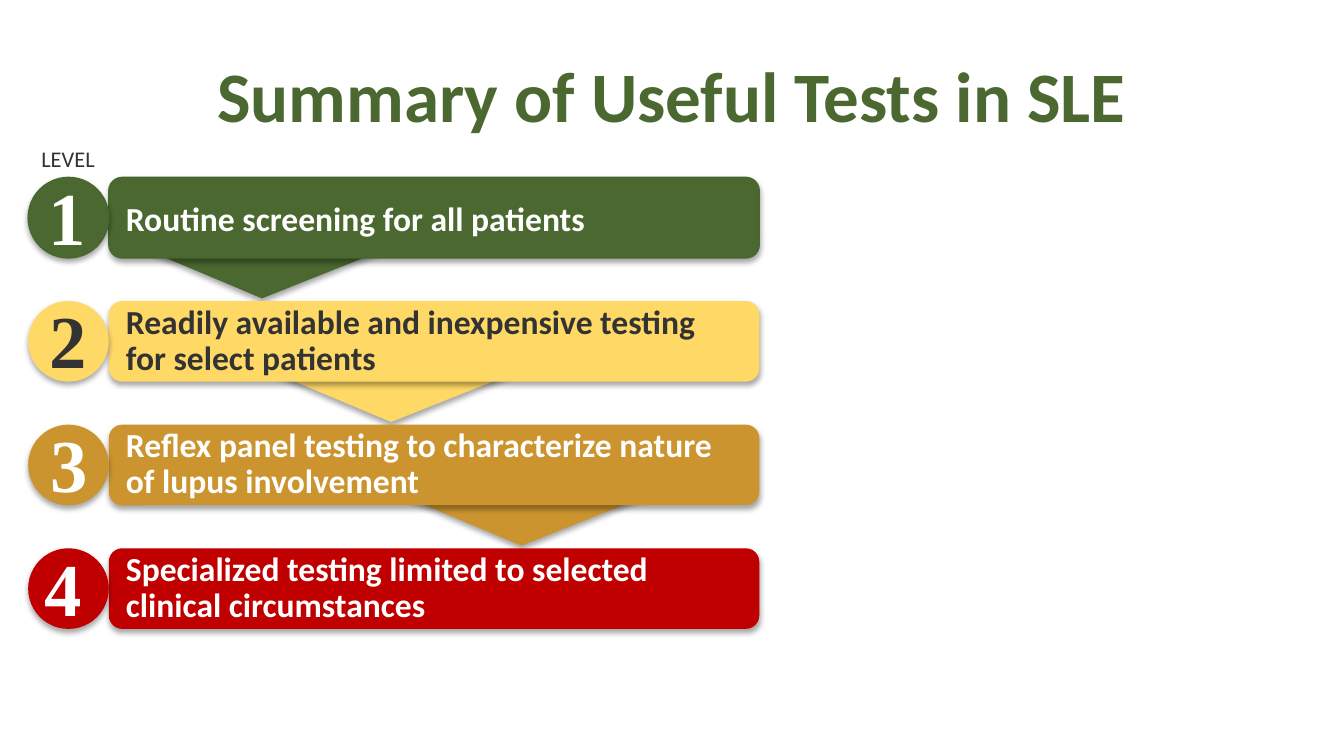
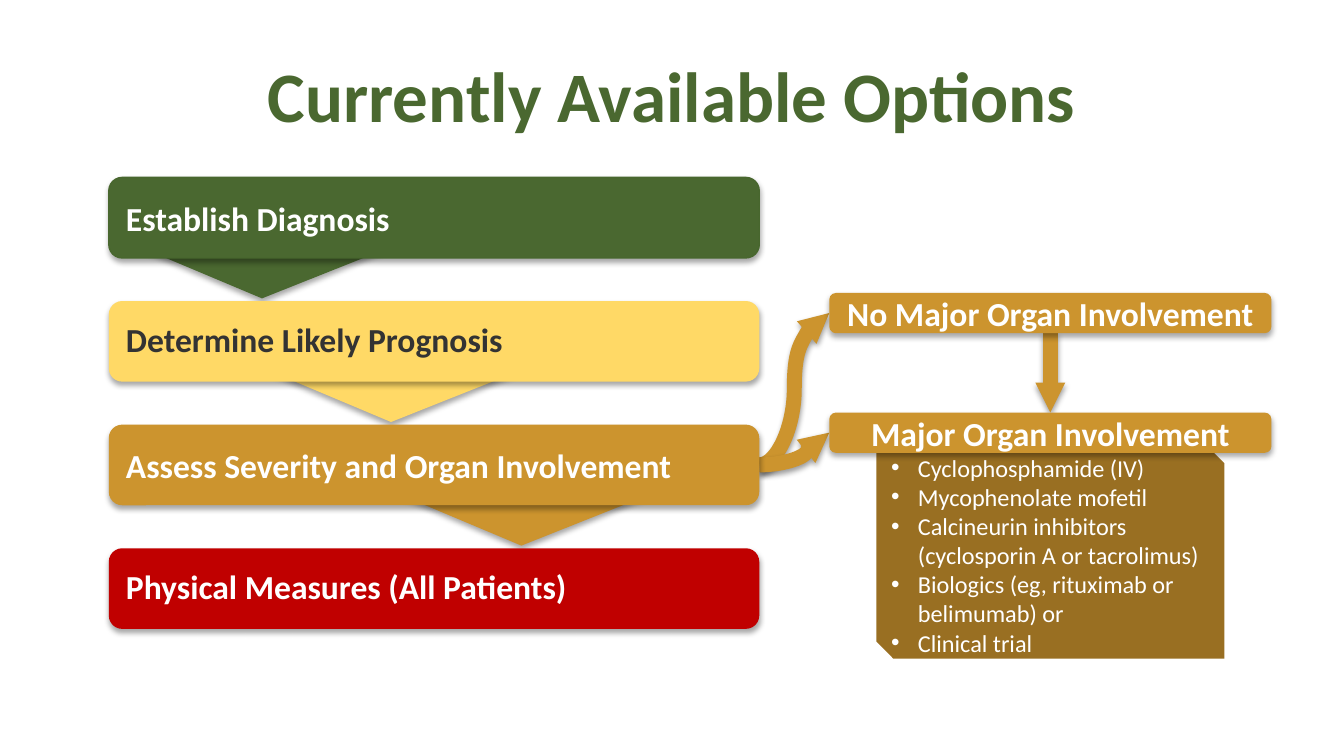
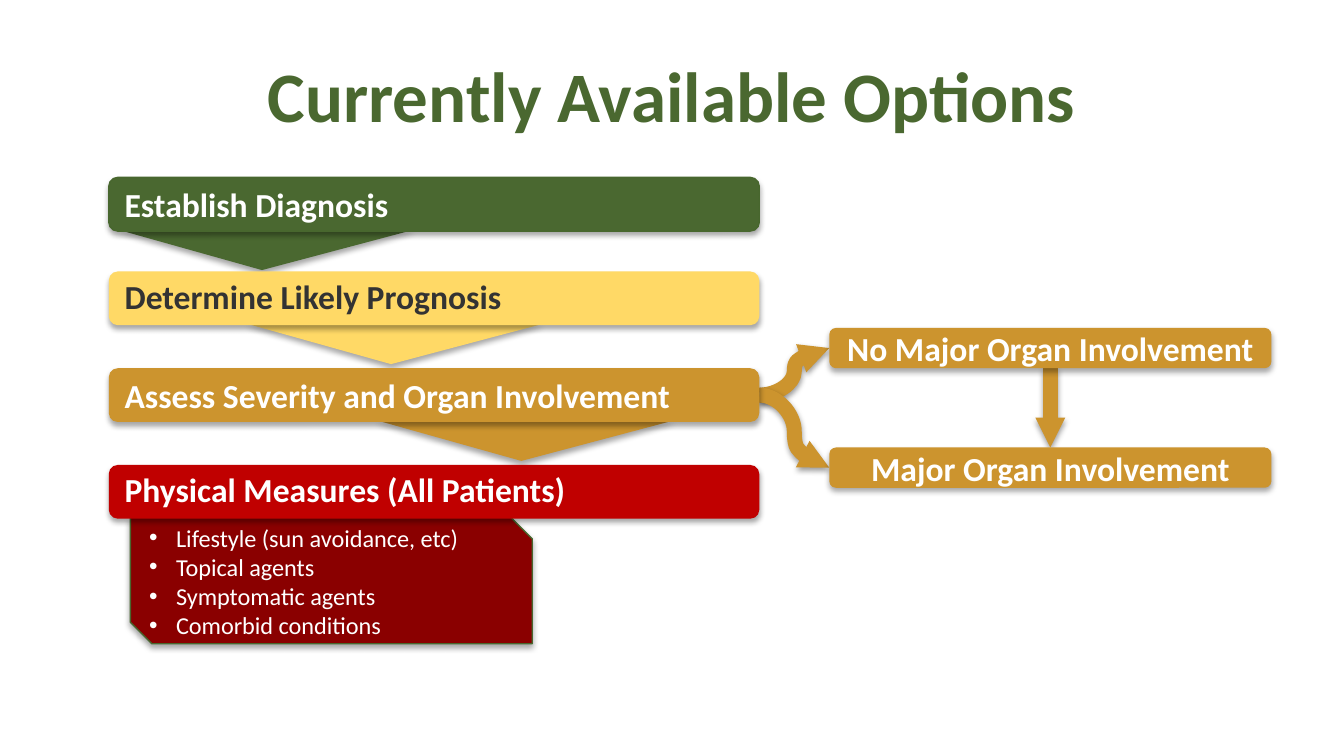
from lxml import etree
from pptx import Presentation
from pptx.dml.color import RGBColor
from pptx.enum.shapes import MSO_CONNECTOR, MSO_SHAPE
from pptx.enum.text import MSO_ANCHOR, MSO_AUTO_SIZE, PP_ALIGN
from pptx.oxml.ns import qn
from pptx.util import Inches, Pt

ROUND, OVAL, SNIP = (MSO_SHAPE.ROUNDED_RECTANGLE, MSO_SHAPE.OVAL,
                     MSO_SHAPE.SNIP_2_DIAG_RECTANGLE)
STRAIGHT, CURVE = MSO_CONNECTOR.STRAIGHT, MSO_CONNECTOR.CURVE
LEFT, CENTER = PP_ALIGN.LEFT, PP_ALIGN.CENTER
TOP, MIDDLE = MSO_ANCHOR.TOP, MSO_ANCHOR.MIDDLE
SIDE_TOP, SIDE_LEFT, SIDE_BOTTOM, SIDE_RIGHT = range(4)

# Content
COLORS = {
    "green": "4A6830", "edge": "48672E", "yellow": "FFD966", "gold": "CC942E",
    "red": "C00000", "brown": "996F22", "maroon": "8A0000",
    "white": "FFFFFF", "dark": "333333",
}
# Fill, text colour and outline of each level
LEVELS = [("green", "white", "edge"), ("yellow", "dark", None),
          ("gold", "white", None), ("red", "white", None)]
OPTIONS = ["No Major Organ Involvement", "Major Organ Involvement"]
STEPS = [("Establish Diagnosis", 1), ("Determine Likely Prognosis", 0.9),
         ("Assess Severity and Organ Involvement", 1),
         ("Physical Measures (All Patients)", 0.9)]

SLIDES = [
    {
        "title": "Summary of Useful Tests in SLE",
        "bars": [
            ("Routine screening for all patients", 1),
            ("Readily available and inexpensive testing for select patients", 0.9),
            ("Reflex panel testing to characterize nature of lupus involvement", 0.9),
            ("Specialized testing limited to selected clinical circumstances", 0.9),
        ],
        "tops": (1.32, 2.24, 3.16, 4.08), "height": 0.6,
        "notch": {"overlap": 0.15, "height": 0.45},
        "number_lefts": (0.26, 0.27, 0.28, 0.23),
    },
    {
        "title": "Currently Available Options",
        "bars": STEPS,
        "tops": (1.32, 2.24, 3.16, 4.08), "height": 0.6,
        "notch": {"overlap": 0.15, "height": 0.45},
        "option_top": 2.18, "bends": (0.5, 0.7),
        "panel": {"box": (6.52, 3.32, 2.59, 1.58), "fill": "brown", "snip": 0.08,
                  "line": None, "shadow": 0},
        "list_box": (6.53, 3.32, 2.57, 1.63),
        "list": ["Cyclophosphamide (IV)", "Mycophenolate mofetil",
                 "Calcineurin inhibitors (cyclosporin A or tacrolimus)",
                 "Biologics (eg, rituximab or belimumab) or", "Clinical trial"],
    },
    {
        "title": "Currently Available Options",
        "bars": STEPS,
        "tops": (1.32, 2.02, 2.74, 3.46), "height": 0.4,
        "notch": {"overlap": 0.01, "height": 0.3},
        "option_top": 2.44, "bends": (0.5, 0.5),
        "panel": {"box": (0.97, 3.85, 2.99, 0.94), "fill": "maroon", "snip": 0.17,
                  "line": "edge", "shadow": 35},
        "list_box": (1.01, 3.84, 2.58, 0.98),
        "list": ["Lifestyle (sun avoidance, etc)", "Topical agents",
                 "Symptomatic agents", "Comorbid conditions"],
    },
]

# Shared geometry
BAR_LEFT, BAR_WIDTH = 0.81, 4.84
CIRCLE_LEFT = 0.21
NOTCH_LEFTS, NOTCH_WIDTH, NOTCH_TIP = (0.88, 1.84, 2.81), 2.2, 1.07
OPTION_LEFT, OPTION_WIDTH, OPTION_HEIGHT, OPTION_PITCH = 6.17, 3.29, 0.3, 0.89
BAR_FONT = {"name": "Calibri", "size": Pt(18), "bold": True}


def rgb(name):
    return RGBColor.from_string(COLORS[name])


def inches(box):
    return [Inches(v) for v in box]


def add_shadow(shape, alpha=35, dist=1.8):
    """Append the effect list; fill and line must already be set."""
    effects = etree.SubElement(shape._element.spPr, qn("a:effectLst"))
    if alpha:
        outer = etree.SubElement(
            effects, qn("a:outerShdw"), blurRad=str(Pt(3.1)), dist=str(Pt(dist)),
            dir="5400000", rotWithShape="0")
        black = etree.SubElement(outer, qn("a:srgbClr"), val="000000")
        etree.SubElement(black, qn("a:alpha"), val=str(alpha * 1000))


def paint(shape, fill, line=None, shadow=35):
    shape.fill.solid()
    shape.fill.fore_color.rgb = rgb(fill)
    if line:
        shape.line.color.rgb = rgb(line)
        shape.line.width = Pt(0.75)
    else:
        shape.line.fill.background()
    add_shadow(shape, shadow)


def write(shape, lines, color, font, align=LEFT, anchor=MIDDLE, spacing=1,
          bullets=False):
    tf = shape.text_frame
    tf.word_wrap = True
    tf.auto_size = MSO_AUTO_SIZE.NONE
    tf.vertical_anchor = anchor
    for i, line in enumerate(lines):
        p = tf.paragraphs[0] if i == 0 else tf.add_paragraph()
        p.alignment, p.line_spacing, p.space_before = align, spacing, Pt(0)
        if bullets:
            pPr = p._p.get_or_add_pPr()
            pPr.set("marL", str(Inches(0.2)))
            pPr.set("indent", str(-Inches(0.2)))
            etree.SubElement(pPr, qn("a:buFont"), typeface="Arial")
            etree.SubElement(pPr, qn("a:buChar"), char="•")
        r = p.add_run()
        r.text = line
        for key, value in font.items():
            setattr(r.font, key, value)
        r.font.color.rgb = rgb(color)


def add_preset(s, kind, box, fill, line=None, shadow=35):
    sp = s.shapes.add_shape(kind, *inches(box))
    paint(sp, fill, line, shadow)
    return sp


def add_label(s, box, text, color, font):
    sp = s.shapes.add_textbox(*inches(box))
    sp.text_frame.margin_right = 0
    write(sp, [text], color, font, anchor=TOP)


def send_back(s, shape):
    s.shapes._spTree.insert(2, shape._element)


def add_arrow(s, kind, start, start_side, end, end_side, bend=0.5):
    cx = s.shapes.add_connector(kind, 0, 0, 0, 0)
    cx.begin_connect(start, start_side)
    cx.end_connect(end, end_side)
    cx.line.color.rgb = rgb("gold")
    cx.line.width = Pt(8)
    etree.SubElement(cx.line._get_or_add_ln(), qn("a:tailEnd"), type="triangle",
                     w="sm", len="sm")
    add_shadow(cx, 38, 1.6)
    if bend != 0.5:
        guides = cx._element.spPr.find(qn("a:prstGeom")).find(qn("a:avLst"))
        etree.SubElement(guides, qn("a:gd"), name="adj1",
                         fmla=f"val {round(bend * 100000)}")
    send_back(s, cx)


def add_bars(s, data):
    """Draw the notches, then the four level bars over them."""
    notch = data["notch"]
    for left, top, level in zip(NOTCH_LEFTS, data["tops"], LEVELS):
        y = top + data["height"] - notch["overlap"]
        fb = s.shapes.build_freeform(Inches(left), Inches(y))
        fb.add_line_segments([inches((left + NOTCH_TIP, y + notch["height"])),
                              inches((left + NOTCH_WIDTH, y))])
        paint(fb.convert_to_shape(), level[0])
    bars = []
    for (text, spacing), top, (fill, color, line) in zip(
            data["bars"], data["tops"], LEVELS):
        sp = add_preset(s, ROUND, (BAR_LEFT, top, BAR_WIDTH, data["height"]),
                        fill, line)
        write(sp, [text], color, BAR_FONT, spacing=spacing)
        bars.append(sp)
    return bars


def add_numbers(s, data):
    size = data["height"]
    number_font = {"name": "Times New Roman", "size": Pt(40), "bold": True}
    for i, (left, top, (fill, color, line)) in enumerate(
            zip(data["number_lefts"], data["tops"], LEVELS), 1):
        add_preset(s, OVAL, (CIRCLE_LEFT, top, size, size), fill, line)
        add_label(s, (left, top - 0.1, 0.48, 0.77), str(i), color, number_font)
    add_label(s, (CIRCLE_LEFT, 1.03, 0.6, 0.3), "LEVEL", "dark",
              {"name": "Calibri", "size": Pt(12)})


def add_options(s, data, source):
    boxes = []
    for i, text in enumerate(OPTIONS):
        top = data["option_top"] + i * OPTION_PITCH
        sp = add_preset(s, ROUND, (OPTION_LEFT, top, OPTION_WIDTH, OPTION_HEIGHT),
                        "gold")
        write(sp, [text], "white", BAR_FONT, CENTER)
        boxes.append(sp)
    # Each arrow goes to the back, so the lower one is added first
    for box, bend in reversed(list(zip(boxes, data["bends"]))):
        add_arrow(s, CURVE, source, SIDE_RIGHT, box, SIDE_LEFT, bend)
    add_arrow(s, STRAIGHT, boxes[0], SIDE_BOTTOM, boxes[1], SIDE_TOP)


def place(shape, box):
    shape.left, shape.top, shape.width, shape.height = inches(box)


def add_list(s, data):
    """Fill the body placeholder and lay its panel behind it."""
    panel = data["panel"]
    sp = add_preset(s, SNIP, panel["box"], panel["fill"], panel["line"],
                    panel["shadow"])
    sp.adjustments[1] = panel["snip"]
    send_back(s, sp)
    body = s.placeholders[1]
    place(body, data["list_box"])
    write(body, data["list"], "white", {"name": "Calibri", "size": Pt(13)},
          anchor=TOP, bullets=True)


def main():
    prs = Presentation()
    prs.slide_width = Inches(10)
    prs.slide_height = prs.slide_width * 9 // 16
    for data in SLIDES:
        s = prs.slides.add_slide(prs.slide_layouts[1 if "list" in data else 5])
        place(s.shapes.title, (0.5, 0.23, 9, 0.94))
        write(s.shapes.title, [data["title"]], "green",
              {"name": "Calibri", "size": Pt(38), "bold": True}, CENTER)
        bars = add_bars(s, data)
        if "number_lefts" in data:
            add_numbers(s, data)
        if "list" in data:
            add_options(s, data, bars[2])
            add_list(s, data)
    prs.save("out.pptx")


if __name__ == "__main__":
    main()
